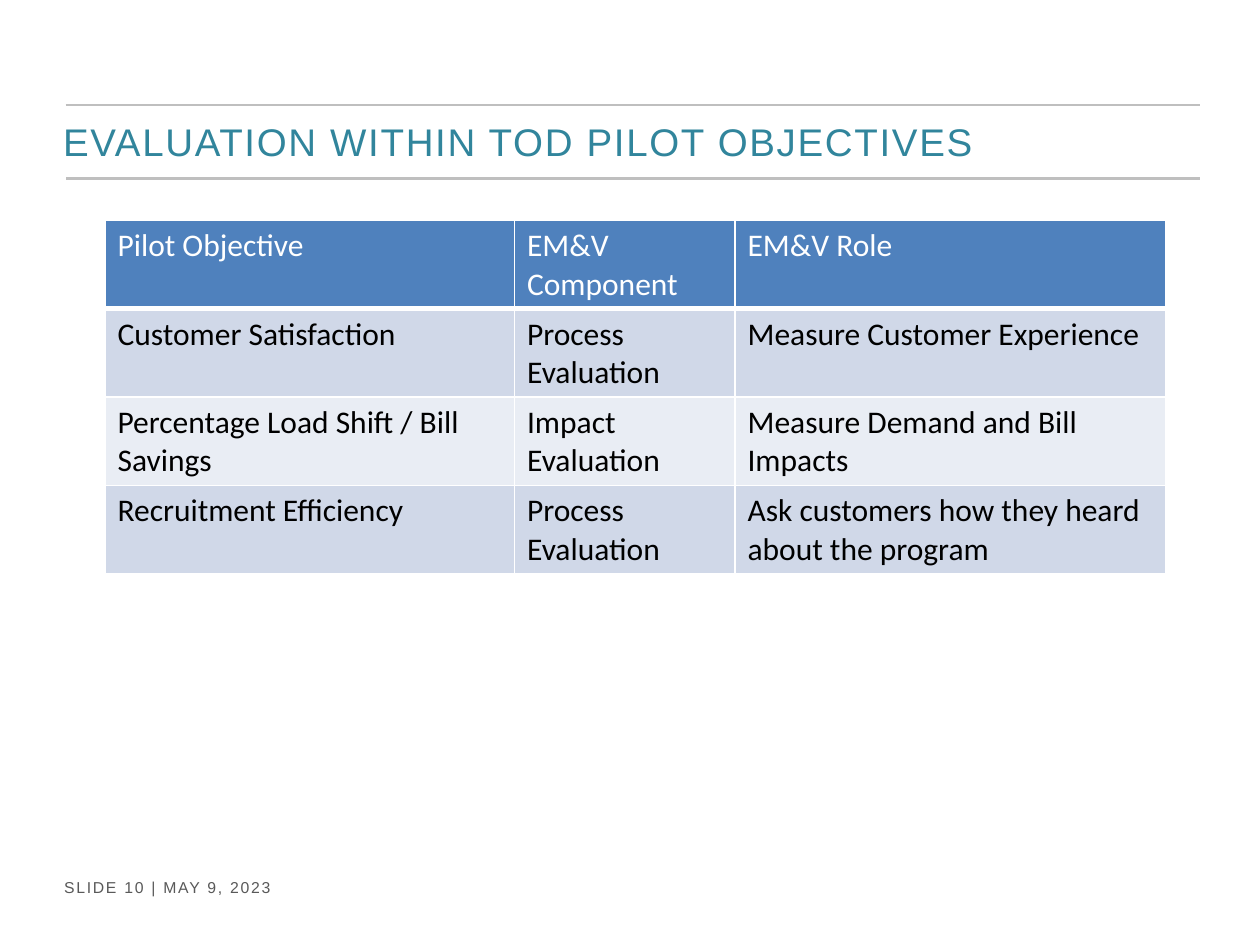
from dataclasses import dataclass

from lxml.etree import SubElement
from pptx import Presentation
from pptx.dml.color import RGBColor as RGB
from pptx.enum.shapes import MSO_CONNECTOR as CONN
from pptx.enum.text import MSO_ANCHOR as ANCHOR
from pptx.oxml.ns import qn
from pptx.util import Pt


@dataclass(frozen=True)
class Theme:
    """Colours, fonts and type sizes of the slide."""
    title: str = "31859C"
    footer: str = "595959"
    rule: str = "BFBFBF"
    header: str = "4F81BD"
    bands: tuple = ("D0D8E8", "E9EDF4")
    white: str = "FFFFFF"
    black: str = "000000"
    display: str = "Arial"
    body: str = "Calibri"
    title_size: int = 22
    body_size: int = 18
    footer_size: int = 9


T = Theme()
ROWS = (
    ("Pilot Objective", "EM&V Component", "EM&V Role"),
    ("Customer Satisfaction", "Process Evaluation", "Measure Customer Experience"),
    ("Percentage Load Shift / Bill Savings", "Impact Evaluation",
     "Measure Demand and Bill Impacts"),
    ("Recruitment Efficiency", "Process Evaluation",
     "Ask customers how they heard about the program"),
)


def write(tf, text, *, size, color, font=T.body, spacing=0):
    """Put one formatted run of text into a text frame."""
    tf.word_wrap = True
    r = tf.paragraphs[0].add_run()
    r.text = text
    r.font.name, r.font.size, r.font.bold = font, Pt(size), False
    r.font.color.rgb = RGB.from_string(color)
    if spacing:
        r.font._element.set("spc", str(spacing * 100))


def add_label(s, box, text, anchor=ANCHOR.TOP, **fmt):
    """Add a text box in the display font."""
    tf = s.shapes.add_textbox(*map(Pt, box)).text_frame
    tf.vertical_anchor = anchor
    write(tf, text, font=T.display, spacing=1, **fmt)


def add_rule(s, x, y, width):
    """Add a horizontal grey line."""
    ln = s.shapes.add_connector(CONN.STRAIGHT, Pt(x), Pt(y), Pt(x + width), Pt(y))
    ln.line.color.rgb = RGB.from_string(T.rule)
    ln.line.width = Pt(1.5)
    SubElement(ln._element.spPr, qn("a:effectLst"))


def add_borders(cell, bottom):
    """Draw white borders around a cell."""
    tc_pr = cell._tc.get_or_add_tcPr()
    for side, width in (("L", 1), ("R", 1), ("T", 1), ("B", bottom)):
        ln = SubElement(tc_pr, qn(f"a:ln{side}"), w=str(Pt(width)))
        fill = SubElement(ln, qn("a:solidFill"))
        SubElement(fill, qn("a:srgbClr"), val=T.white)


def add_grid(s, x, y, widths, row_height, rows):
    """Add a table with a header row and banded body rows."""
    frame = s.shapes.add_table(len(rows), len(widths), Pt(x), Pt(y),
                               Pt(sum(widths)), Pt(row_height * len(rows)))
    table = frame.table
    for col, width in zip(table.columns, widths):
        col.width = Pt(width)
    for i, row in enumerate(rows):
        fill = T.bands[(i - 1) % 2] if i else T.header
        for j, text in enumerate(row):
            cell = table.cell(i, j)
            add_borders(cell, bottom=1 if i else 3)
            cell.fill.solid()
            cell.fill.fore_color.rgb = RGB.from_string(fill)
            write(cell.text_frame, text, size=T.body_size,
                  color=T.black if i else T.white)


def main():
    """Build and save the slide."""
    prs = Presentation()
    prs.slide_width, prs.slide_height = Pt(720), Pt(540)
    s = prs.slides.add_slide(prs.slide_layouts[6])
    add_rule(s, 37.5, 60, 648)
    add_rule(s, 38, 102, 648)
    add_label(s, (29.5, 498, 193, 18), "SLIDE 10 | MAY 9, 2023",
              size=T.footer_size, color=T.footer)
    add_label(s, (29, 59.5, 655, 42), "EVALUATION WITHIN TOD PILOT OBJECTIVES",
              anchor=ANCHOR.MIDDLE, size=T.title_size, color=T.title)
    add_grid(s, 60, 126, (234, 126, 246), 50.4, ROWS)
    prs.save("out.pptx")


if __name__ == "__main__":
    main()
